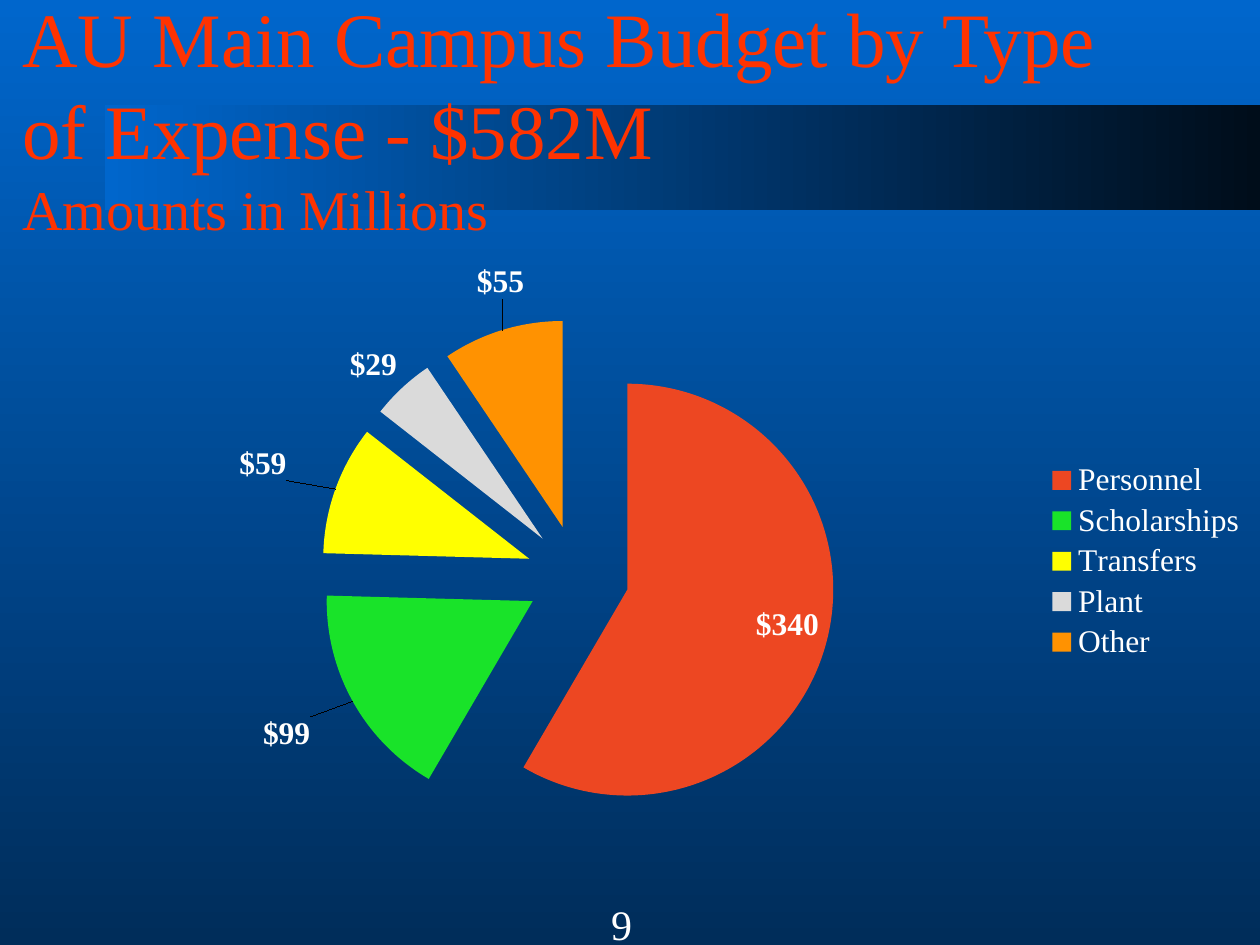
from dataclasses import dataclass

import pptx
import pptx.chart.data
import pptx.dml.color
import pptx.enum.chart
import pptx.enum.shapes
import pptx.enum.text
import pptx.oxml
import pptx.oxml.ns
import pptx.util
from pptx.util import Cm, Pt


@dataclass(frozen=True)
class Theme:
    font: str = "Times New Roman"
    sky: str = "0066CC"
    deep: str = "002D5A"
    night: str = "000D1A"
    heading: str = "FF3300"
    text: str = "FFFFFF"
    title_size: int = 44
    subtitle_size: int = 32
    number_size: int = 24
    chart_size: int = 18


THEME = Theme()
MONEY = '"$"#,##0'
# Expense type, amount in millions, slice colour, label shift (share of chart)
EXPENSES = [
    ("Personnel", 340, "ED4722", None),
    ("Scholarships", 99, "19E329", (-0.03, 0.02)),
    ("Transfers", 59, "FFFF00", (-0.035, -0.01)),
    ("Plant", 29, "DADADA", None),
    ("Other", 55, "FF9201", (0.02, -0.04)),
]


def rgb(code):
    return pptx.dml.color.RGBColor.from_string(code)


def style_font(font, size, color, bold=False):
    font.name = THEME.font
    font.size = Pt(size)
    font.bold = bold
    font.color.rgb = rgb(color)


def fill_gradient(fill, start, end, angle):
    fill.gradient()
    fill.gradient_angle = angle
    for stop, color in zip(fill.gradient_stops, (start, end)):
        stop.color.rgb = rgb(color)


def chart_layout(x, y, size=None):
    """Manual layout: an inner plot box if size is given, else an offset."""
    parts = []
    if size:
        parts += [("layoutTarget", "inner"), ("xMode", "edge"), ("yMode", "edge")]
    parts += [("x", x), ("y", y)]
    if size:
        parts += [("w", size[0]), ("h", size[1])]
    inner = "".join(f'<c:{tag} val="{value}"/>' for tag, value in parts)
    return pptx.oxml.parse_xml(
        f'<c:layout {pptx.oxml.ns.nsdecls("c")}>'
        f"<c:manualLayout>{inner}</c:manualLayout></c:layout>")


def add_band(slide, left, top, width, height):
    band = slide.shapes.add_shape(
        pptx.enum.shapes.MSO_SHAPE.RECTANGLE, left, top, width, height)
    band.shadow.inherit = False
    band.line.fill.background()
    fill_gradient(band.fill, THEME.sky, THEME.night, 0)


def add_text(slide, box, text, sizes, color, anchor):
    """Add one paragraph whose lines, split by line breaks, take the sizes."""
    frame = slide.shapes.add_textbox(*box).text_frame
    frame.word_wrap = True
    frame.vertical_anchor = anchor
    frame.text = text
    for run, size in zip(frame.paragraphs[0].runs, sizes):
        style_font(run.font, size, color)


def add_expense_pie(slide, left, top, width, height):
    data = pptx.chart.data.CategoryChartData(number_format=MONEY)
    data.categories = [expense[0] for expense in EXPENSES]
    data.add_series("Amount", [expense[1] for expense in EXPENSES])
    pie = slide.shapes.add_chart(
        pptx.enum.chart.XL_CHART_TYPE.PIE, left, top, width, height, data).chart
    style_font(pie.font, THEME.chart_size, THEME.text)
    pie.has_title = False
    pie.has_legend = True
    pie.legend.position = pptx.enum.chart.XL_LEGEND_POSITION.RIGHT
    pie.legend.include_in_layout = False
    style_font(pie.legend.font, THEME.chart_size, THEME.text)

    plot = pie.plots[0]
    plot.vary_by_categories = True
    qn = pptx.oxml.ns.qn
    plot_area = pie._chartSpace.find(".//" + qn("c:plotArea"))
    for layout in plot_area.findall(qn("c:layout")):
        plot_area.remove(layout)
    plot_area.insert(0, chart_layout(0.068, 0.095, (0.724, 0.86)))

    amounts = plot.series[0]
    amounts._element.find(qn("c:tx")).addnext(pptx.oxml.parse_xml(
        f'<c:explosion {pptx.oxml.ns.nsdecls("c")} val="25"/>'))
    labels = amounts.data_labels
    labels.show_value = True
    labels.number_format = MONEY
    labels.number_format_is_linked = False
    style_font(labels.font, THEME.chart_size, THEME.text, bold=True)

    positions = pptx.enum.chart.XL_LABEL_POSITION
    for index, (_, _, color, shift) in enumerate(EXPENSES):
        point = amounts.points[index]
        point.format.fill.solid()
        point.format.fill.fore_color.rgb = rgb(color)
        label = point.data_label
        style_font(label.font, THEME.chart_size, THEME.text, bold=True)
        label.position = positions.OUTSIDE_END if index else positions.INSIDE_END
        if shift:
            entry = labels._element.findall(qn("c:dLbl"))[-1]
            entry.find(qn("c:idx")).addnext(chart_layout(*shift))


def main():
    deck = pptx.Presentation()
    deck.slide_width, deck.slide_height = Cm(25.4), Cm(19.05)
    slide = deck.slides.add_slide(deck.slide_layouts[6])
    fill_gradient(slide.background.fill, THEME.sky, THEME.deep, 270)

    anchors = pptx.enum.text.MSO_ANCHOR
    add_band(slide, Cm(2.12), Cm(2.12), Cm(23.28), Cm(2.12))
    add_text(slide, (Cm(0.2), Cm(-0.2), Cm(23.29), Cm(5.08)),
             "AU Main Campus Budget by Type of Expense - $582M\vAmounts in Millions",
             (THEME.title_size, THEME.subtitle_size), THEME.heading, anchors.MIDDLE)
    add_expense_pie(slide, Cm(1.27), Cm(5.28), Cm(24.13), Cm(12.07))
    add_text(slide, (Cm(12.07), Cm(17.98), Cm(1.07), Cm(1.27)),
             "9", (THEME.number_size,), THEME.text, anchors.TOP)
    deck.save("out.pptx")


if __name__ == "__main__":
    main()
